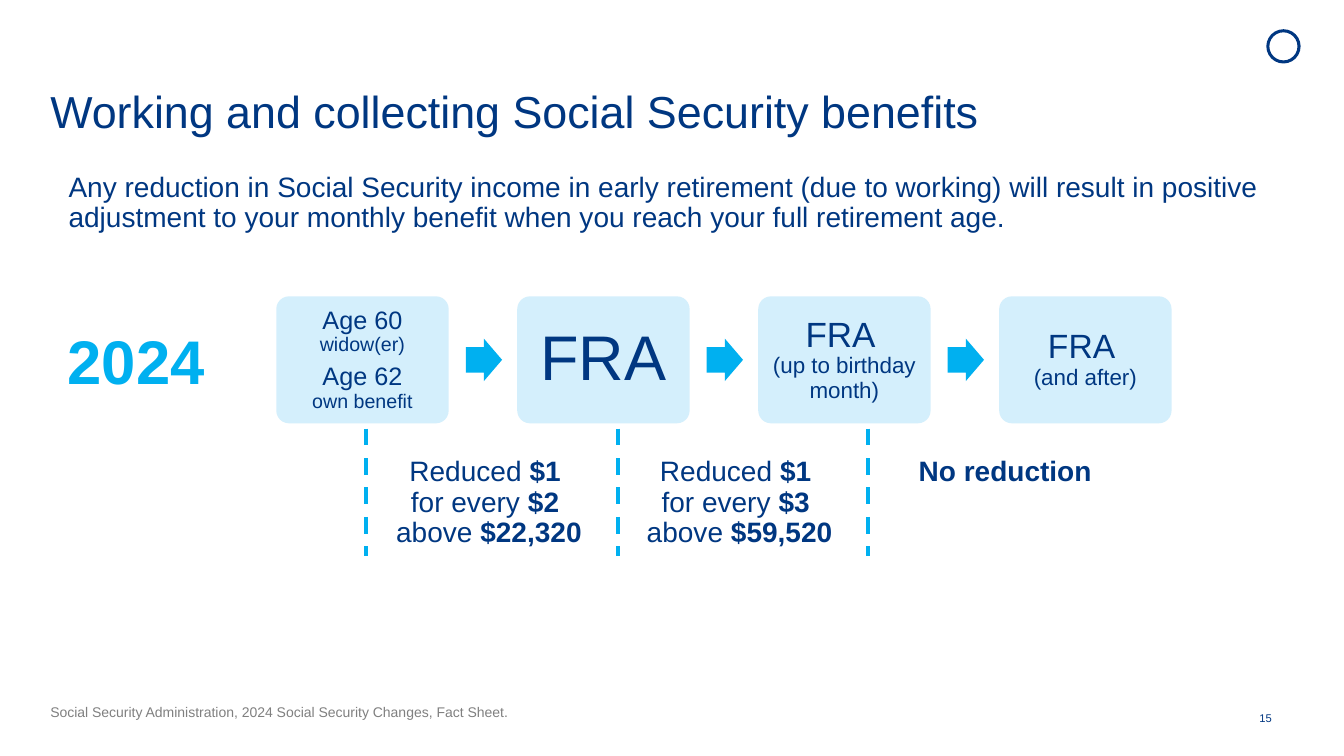
from dataclasses import dataclass

from lxml import etree
from pptx import Presentation
from pptx.dml.color import RGBColor
from pptx.enum.dml import MSO_LINE
from pptx.enum.shapes import MSO_CONNECTOR, MSO_SHAPE
from pptx.enum.text import MSO_ANCHOR, PP_ALIGN
from pptx.oxml.ns import qn
from pptx.util import Inches, Pt

LEFT, CENTER, RIGHT = PP_ALIGN.LEFT, PP_ALIGN.CENTER, PP_ALIGN.RIGHT
TOP, MIDDLE, BOTTOM = MSO_ANCHOR.TOP, MSO_ANCHOR.MIDDLE, MSO_ANCHOR.BOTTOM
ROUNDED, ARROW, RING = MSO_SHAPE.ROUNDED_RECTANGLE, MSO_SHAPE.RIGHT_ARROW, MSO_SHAPE.DONUT
STRAIGHT, DASH = MSO_CONNECTOR.STRAIGHT, MSO_LINE.DASH
BREAK = "\n"
CELL = 0.1  # inches per grid column and row


@dataclass(frozen=True)
class Theme:
    font: str = "Arial"
    navy: str = "003781"
    bright: str = "00B0F0"
    pale: str = "D4EFFC"
    gray: str = "808080"
    title: int = 32
    year: int = 44
    body: int = 20
    age: int = 18
    age_note: int = 14
    stage: int = 45
    late_stage: int = 25
    last_stage: int = 24
    stage_note: int = 16
    source: int = 10
    number: int = 8


def grid(*cells):
    return [Inches(cell * CELL) for cell in cells]


def apply(target, values):
    for name, value in values.items():
        setattr(target, name, value)


class SlideBuilder:
    def __init__(self, deck, theme):
        self.theme = theme
        self.slide = deck.slides.add_slide(deck.slide_layouts[6])

    def shape(self, kind, place, color, adjustments):
        shape = self.slide.shapes.add_shape(kind, *grid(*place))
        shape.shadow.inherit = False
        shape.fill.solid()
        shape.fill.fore_color.rgb = RGBColor.from_string(color)
        shape.line.fill.background()
        for index, value in enumerate(adjustments):
            shape.adjustments[index] = value

    def divider(self, column, top, bottom):
        line = self.slide.shapes.add_connector(STRAIGHT, *grid(column, top, column, bottom))
        line.line.color.rgb = RGBColor.from_string(self.theme.bright)
        apply(line.line, {"width": Pt(3), "dash_style": DASH})
        etree.SubElement(line._element.spPr, qn("a:effectLst"))

    def text(self, place, paragraphs, color=None, align=LEFT, anchor=TOP,
             margins=(1, 0.5), spacing=0.9, gap=0):
        """Each paragraph is a list of (words, size, bold) spans or BREAK."""
        box = self.slide.shapes.add_textbox(*grid(*place))
        frame = box.text_frame
        side, edge = grid(*margins)
        apply(frame, {"word_wrap": True, "vertical_anchor": anchor,
                      "margin_left": side, "margin_right": side,
                      "margin_top": edge, "margin_bottom": edge})
        for index, spans in enumerate(paragraphs):
            para = frame.paragraphs[0] if index == 0 else frame.add_paragraph()
            apply(para, {"alignment": align, "line_spacing": spacing,
                         "space_before": Pt(gap if index else 0)})
            for part in spans:
                if part == BREAK:
                    para.add_line_break()
                    continue
                words, size, bold = part
                span = para.add_run()
                span.text = words
                apply(span.font, {"name": self.theme.font, "size": Pt(size), "bold": bold})
                span.font.color.rgb = RGBColor.from_string(color or self.theme.navy)


def add_stages(page, theme):
    def labelled(name, size, note, note_size):
        return [(name, size, False), BREAK, (note, note_size, False)]

    stages = [
        ([labelled("Age 60", theme.age, "widow(er)", theme.age_note),
          labelled("Age 62", theme.age, "own benefit", theme.age_note)], 0.7),
        ([[("FRA", theme.stage, False)]], 1),
        ([labelled("FRA ", theme.late_stage, "(up to birthday month)", theme.stage_note)], 1),
        ([labelled("FRA ", theme.last_stage, "(and after)", theme.stage_note)], 1),
    ]
    first, step, top, width, height, inner = 27.4, 23.9, 29.4, 17.1, 12.6, 0.4
    for index, (paragraphs, margin) in enumerate(stages):
        left = first + index * step
        page.shape(ROUNDED, (left, top, width, height), theme.pale, [0.1])
        page.text((left + inner, top + inner, width - 2 * inner, height - 2 * inner),
                  paragraphs, align=CENTER, anchor=MIDDLE, margins=(margin, margin), gap=6)
        if index < len(stages) - 1:
            page.shape(ARROW, (left + width + 1.7, 33.6, 3.6, 4.2), theme.bright, [0.6, 0.5])


def add_dividers(page):
    """Drawn before the stages, whose boxes cover the upper ends."""
    for column in (36.3, 61.3, 86.1):
        page.divider(column, 39.6, 55.2)


def add_reductions(page, theme):
    size = theme.body
    for left, width, earned, limit in ((36.3, 24.4, "$2 ", " $22,320"),
                                       (61.3, 24.1, "$3 ", " $59,520")):
        spans = [("Reduced ", size, False), ("$1 ", size, True), BREAK,
                 ("for every ", size, False), (earned, size, True), BREAK,
                 ("above", size, False), (limit, size, True)]
        page.text((left, 44.9, width, 10.1), [spans], align=CENTER)
    page.text((88.5, 44.9, 22.4, 4), [[("No reduction", size, True)]], align=CENTER)


def main():
    deck = Presentation()
    apply(deck, {"slide_width": Inches(13.33), "slide_height": Inches(7.5)})
    theme = Theme()
    page = SlideBuilder(deck, theme)

    page.shape(RING, (125.6, 2.9, 3.4, 3.4), theme.navy, [0.09])
    page.text((4, 6.9, 123.1, 7.3),
              [[("Working and collecting Social Security benefits", theme.title, False)]],
              anchor=BOTTOM)
    page.text((6.8, 16.7, 125.5, 13.2),
              [[("Any reduction in Social Security income in early retirement (due to working) "
                 "will result in positive adjustment to your monthly benefit when you reach "
                 "your full retirement age.", theme.body, False)]], margins=(0, 0.5))
    page.text((5.5, 31.5, 15.8, 8.4), [[("2024", theme.year, True)]],
              color=theme.bright, align=RIGHT, spacing=1.0)
    add_dividers(page)
    add_stages(page, theme)
    add_reductions(page, theme)
    page.text((4, 69.3, 54.2, 2.7),
              [[("Social Security Administration, 2024 Social Security Changes, Fact Sheet.",
                 theme.source, False)]], color=theme.gray, spacing=1.0)
    page.text((124.9, 69.2, 4, 4), [[("15", theme.number, False)]],
              anchor=MIDDLE, margins=(0, 0.6), spacing=1.0)
    deck.save("out.pptx")


if __name__ == "__main__":
    main()
